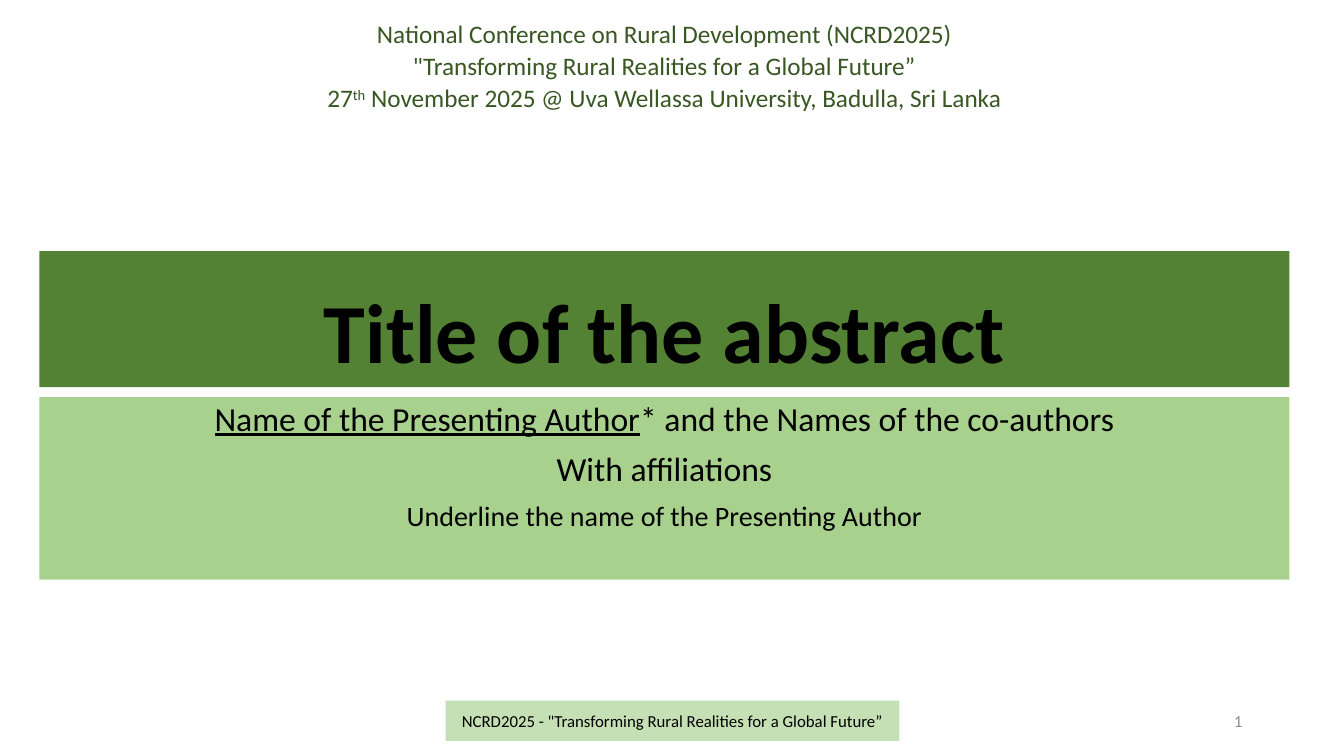
from pptx import Presentation
from pptx.dml.color import RGBColor
from pptx.enum.shapes import MSO_SHAPE as Preset
from pptx.enum.text import MSO_ANCHOR as Anchor, MSO_AUTO_SIZE as AutoSize, PP_ALIGN as Align
from pptx.util import Pt

PX = 9144
COLORS = {
    "title_band": "548235",
    "author_band": "A9D18E",
    "footer_band": "C5E0B4",
    "heading": "385723",
    "ink": "000000",
    "page": "8C8C8C",
}
THEME = '"Transforming Rural Realities for a Global Future”'


class SlideBuilder:
    font_name = "Calibri"

    def __init__(self, slide):
        self.slide = slide

    def color(self, key):
        return RGBColor.from_string(COLORS[key])

    def band(self, box, fill, paragraphs, **style):
        band = self.slide.shapes.add_shape(Preset.RECTANGLE, *(PX * n for n in box))
        band.shadow.inherit = False
        band.fill.solid()
        band.fill.fore_color.rgb = self.color(fill)
        band.line.fill.background()
        self.fill_text(band.text_frame, paragraphs, **style)

    def label(self, box, paragraphs, **style):
        label = self.slide.shapes.add_textbox(*(PX * n for n in box))
        self.fill_text(label.text_frame, paragraphs, **style)

    def fill_text(self, frame, paragraphs, color="ink", anchor=Anchor.MIDDLE, align=Align.CENTER,
                  spacing=1.0, gap=0, auto_size=AutoSize.NONE):
        for key, value in {"word_wrap": True, "vertical_anchor": anchor,
                           "auto_size": auto_size}.items():
            setattr(frame, key, value)
        for index, pieces in enumerate(paragraphs):
            paragraph = frame.add_paragraph() if index else frame.paragraphs[0]
            layout = {"alignment": align, "line_spacing": spacing,
                      "space_before": Pt(gap if index else 0)}
            for key, value in layout.items():
                setattr(paragraph, key, value)
            for text, size, extras in pieces:
                self.add_piece(paragraph, text, size, color, **extras)

    def add_piece(self, paragraph, text, size, color, baseline=None, **extras):
        piece = paragraph.add_run()
        piece.text = text
        piece.font.color.rgb = self.color(color)
        for key, value in {"name": self.font_name, "size": Pt(size), **extras}.items():
            setattr(piece.font, key, value)
        if baseline:
            piece._r.get_or_add_rPr().set("baseline", str(baseline))


def main():
    deck = Presentation()
    deck.slide_width, deck.slide_height = 1333 * PX, 750 * PX
    page = SlideBuilder(deck.slides.add_slide(deck.slide_layouts[6]))

    page.band((39, 249, 1240, 135), "title_band",
              [[("Title of the abstract", 60, {"bold": True})]],
              anchor=Anchor.BOTTOM, spacing=0.9)
    page.band((39, 394, 1240, 181), "author_band", [
        [("Name of the Presenting Author", 24, {"underline": True}),
         ("* and the Names of the co-authors", 24, {})],
        [("With affiliations", 24, {})],
        [("Underline the name of the Presenting Author", 20, {})],
    ], anchor=Anchor.TOP, spacing=0.9, gap=10)
    page.label((942, 695, 300, 40), [[("1", 12, {})]], color="page", align=Align.RIGHT)
    page.band((442, 695, 450, 40), "footer_band", [[("NCRD2025 - " + THEME, 12, {})]])
    page.label((299, 11, 720, 107), [
        [("National Conference on Rural Development (NCRD2025)", 18, {})],
        [(THEME, 18, {})],
        [("27", 18, {}), ("th", 18, {"baseline": 30000}),
         (" November 2025 @ Uva Wellassa University, Badulla, Sri Lanka", 18, {})],
    ], color="heading", anchor=Anchor.TOP, spacing=1.07, auto_size=AutoSize.SHAPE_TO_FIT_TEXT)

    deck.save("out.pptx")


if __name__ == "__main__":
    main()
